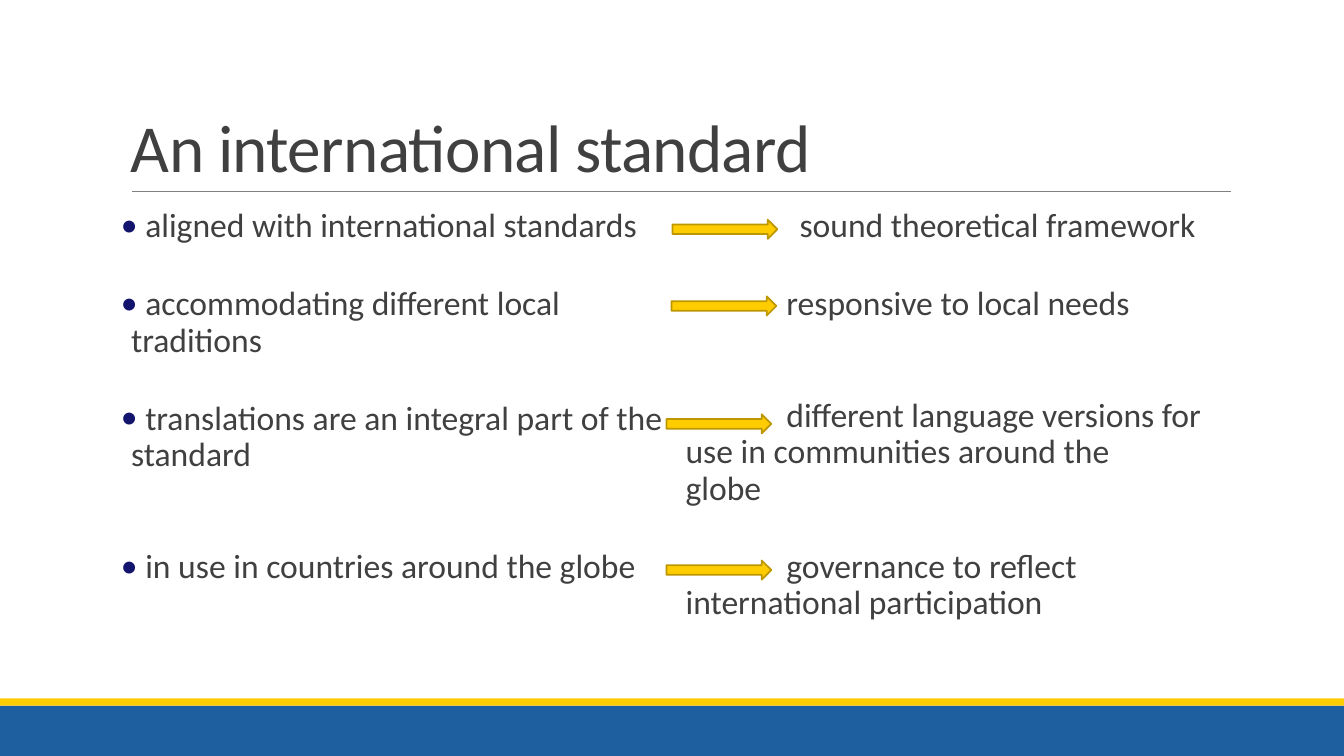
from lxml import etree
from pptx import Presentation
from pptx.dml.color import RGBColor
from pptx.enum.shapes import MSO_CONNECTOR, MSO_SHAPE
from pptx.enum.text import MSO_ANCHOR
from pptx.oxml.ns import qn
from pptx.util import Inches, Pt

RECTANGLE = MSO_SHAPE.RECTANGLE
RIGHT_ARROW = MSO_SHAPE.RIGHT_ARROW
STRAIGHT = MSO_CONNECTOR.STRAIGHT
TOP, BOTTOM = MSO_ANCHOR.TOP, MSO_ANCHOR.BOTTOM

BLUE = RGBColor(0x1E, 0x5F, 0x9F)
YELLOW = RGBColor(0xFF, 0xCC, 0x00)
OCHRE = RGBColor(0xBD, 0x97, 0x00)
GRAY = RGBColor(0x80, 0x80, 0x80)
INK = RGBColor(0x40, 0x40, 0x40)
NAVY = RGBColor(0x12, 0x14, 0x6E)

FEATURES = [
    (" aligned with international standards", 18),
    (" accommodating different local traditions", 18),
    (" translations are an integral part of the standard", 42),
    (" in use in countries around the globe", 42),
]
OUTCOMES = [
    ("sound theoretical framework", 18, 1.13),
    ("responsive to local needs", 42, 1),
    ("different language versions for\vuse in communities around the\vglobe", 18, 1),
    ("governance to reflect\vinternational participation", 18, 1),
]
ARROWS = [(6.67, 2.18), (6.66, 2.94), (6.61, 4.11), (6.61, 5.56)]


class Slide:
    font = "Calibri"

    def __init__(self, page):
        self.page = page

    def shape(self, kind, left, top, width, height, fill, outline=None):
        shape = self.page.shapes.add_shape(
            kind, Inches(left), Inches(top), Inches(width), Inches(height))
        shape.shadow.inherit = False
        shape.fill.solid()
        shape.fill.fore_color.rgb = fill
        if outline is None:
            shape.line.fill.background()
        else:
            shape.line.color.rgb = outline
            shape.line.width = Pt(1.25)

    def rule(self, left, right, top):
        line = self.page.shapes.add_connector(
            STRAIGHT, Inches(left), Inches(top), Inches(right), Inches(top))
        line.line.color.rgb = GRAY
        line.line.width = Pt(0.5)
        etree.SubElement(line.element.spPr, qn("a:effectLst"))

    def frame(self, left, top, width, height, inset, anchor):
        box = self.page.shapes.add_textbox(
            Inches(left), Inches(top), Inches(width), Inches(height))
        frame = box.text_frame
        frame.word_wrap = True
        frame.vertical_anchor = anchor
        frame.margin_left = frame.margin_right = Inches(inset)
        return frame

    def style(self, para, size, line_spacing):
        para.line_spacing = line_spacing
        para.font.name = self.font
        para.font.size = Pt(size)
        para.font.color.rgb = INK

    def title(self, text):
        para = self.frame(1.2, 0.31, 11, 1.59, 0.1, BOTTOM).paragraphs[0]
        span = para.add_run()
        span.text = text
        span.font.element.get_or_add_rPr().set("spc", "-50") if hasattr(
            span.font, "element") else span._r.get_or_add_rPr().set("spc", "-50")
        self.style(para, 48, 0.85)

    def column(self, left, items, bulleted=False):
        frame = self.frame(left, 2.02, 5.4, 4.4, 0, TOP)
        for index, (text, after, indent) in enumerate(items):
            para = frame.add_paragraph() if index else frame.paragraphs[0]
            para.text = text
            para.space_before = Pt(12)
            para.space_after = Pt(after)
            properties = para._p.get_or_add_pPr()
            properties.set("marL", str(Inches(max(-indent, 0))))
            properties.set("indent", str(Inches(indent)))
            self.style(para, 24, 0.9)
            if bulleted:
                self.bullet(properties)

    def bullet(self, properties):
        color = etree.Element(qn("a:buClr"))
        etree.SubElement(color, qn("a:srgbClr"), val=str(NAVY))
        font = etree.Element(qn("a:buFont"), typeface=self.font)
        mark = etree.Element(qn("a:buChar"), char="•")
        for part in (color, font, mark):
            properties.find(qn("a:defRPr")).addprevious(part)


def main():
    deck = Presentation()
    deck.slide_width, deck.slide_height = Inches(13.33), Inches(7.5)
    slide = Slide(deck.slides.add_slide(deck.slide_layouts[6]))
    slide.shape(RECTANGLE, 0, 7, 13.33, 0.5, BLUE)
    slide.shape(RECTANGLE, 0, 6.93, 13.33, 0.07, YELLOW)
    slide.rule(1.31, 12.21, 1.9)
    slide.title("An international standard")
    slide.column(1.2, [(*feature, -0.1) for feature in FEATURES], bulleted=True)
    slide.column(6.8, OUTCOMES)
    for left, top in ARROWS:
        slide.shape(RIGHT_ARROW, left, top, 1.04, 0.19, YELLOW, OCHRE)
    deck.save("out.pptx")


if __name__ == "__main__":
    main()
